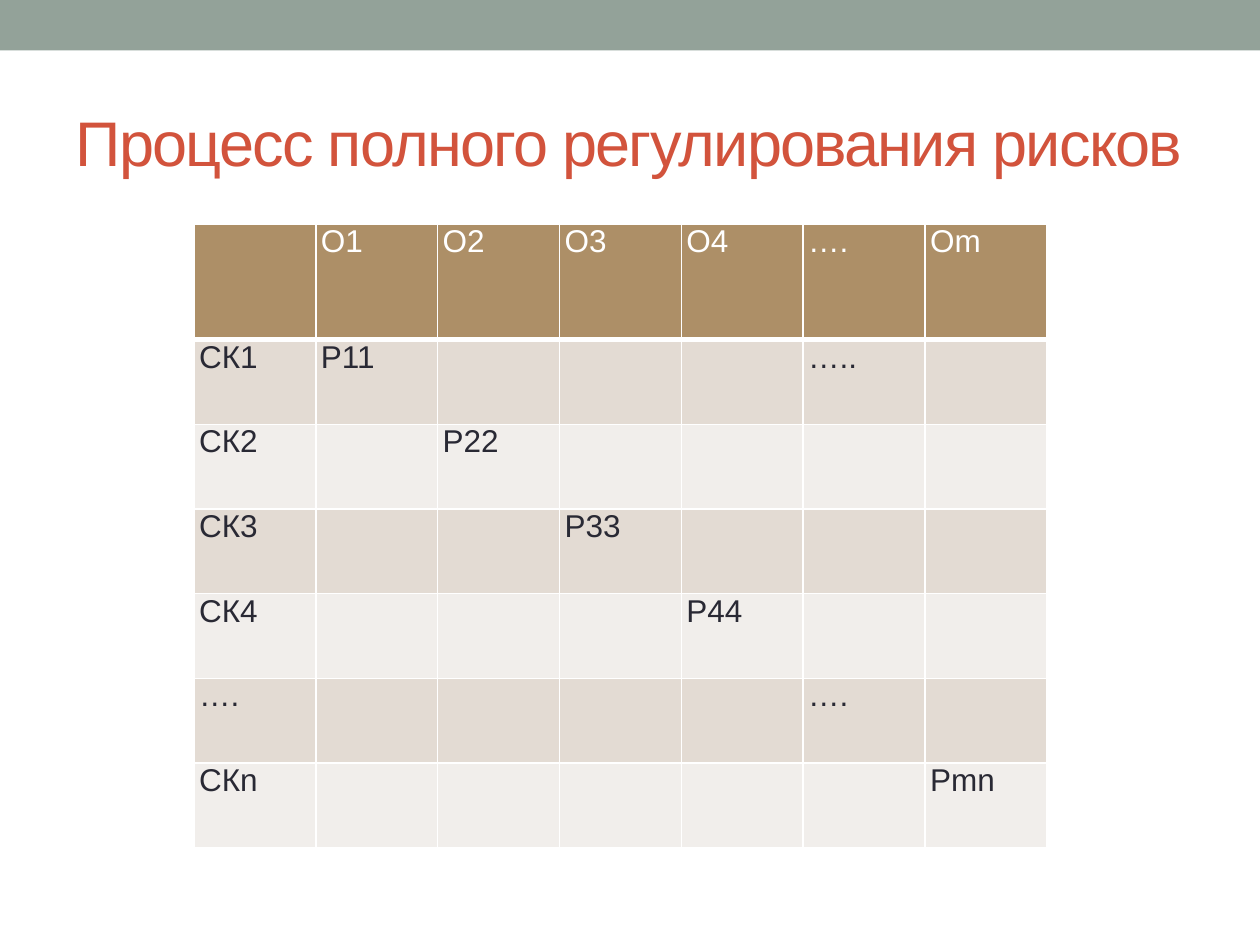
from lxml import etree
from pptx import Presentation
from pptx.dml.color import RGBColor
from pptx.enum.shapes import MSO_SHAPE
from pptx.enum.text import MSO_ANCHOR, PP_ALIGN
from pptx.oxml.ns import qn
from pptx.util import Inches, Pt

RECTANGLE = MSO_SHAPE.RECTANGLE
MIDDLE = MSO_ANCHOR.MIDDLE
LEFT, JUSTIFY = PP_ALIGN.LEFT, PP_ALIGN.JUSTIFY

SAGE = RGBColor(0x93, 0xA2, 0x99)
BRICK = RGBColor(0xD2, 0x53, 0x3C)
TAN = RGBColor(0xAD, 0x8F, 0x67)
BANDS = RGBColor(0xE3, 0xDB, 0xD3), RGBColor(0xF1, 0xEE, 0xEB)
INK = RGBColor(0x29, 0x29, 0x34)
WHITE = RGBColor(0xFF, 0xFF, 0xFF)
FONT = "Arial"

OUTCOMES = ["О1", "О2", "О3", "О4", "….", "Оm"]
SITUATIONS = ["СК1", "СК2", "СК3", "СК4", "….", "СКn"]
# (row, column) of the filled cells in the body of the matrix
RISKS = {(1, 1): "Р11", (1, 5): "…..", (2, 2): "Р22", (3, 3): "Р33",
         (4, 4): "Р44", (5, 5): "….", (6, 6): "Рmn"}
HEADER_SHARE = 0.185


def format_run(run, size, color):
    run.font.name = FONT
    run.font.size = Pt(size)
    run.font.color.rgb = color


def add_band(slide, left, top, width, height):
    band = slide.shapes.add_shape(RECTANGLE, left, top, width, height)
    band.shadow.inherit = False
    band.fill.solid()
    band.fill.fore_color.rgb = SAGE
    band.line.fill.background()


def place_title(slide, left, top, width, height):
    title = slide.shapes.title
    title.left, title.top, title.width, title.height = left, top, width, height
    frame = title.text_frame
    frame.text = "Процесс полного регулирования рисков"
    frame.vertical_anchor = MIDDLE
    frame.word_wrap = True
    heading = frame.paragraphs[0]
    heading.alignment = LEFT
    format_run(heading.runs[0], 36, BRICK)
    heading.runs[0].font._element.set("spc", "-100")


def set_borders(cell, bottom_width):
    """Draw white borders; they must precede the fill in the cell properties."""
    properties = cell._tc.get_or_add_tcPr()
    widths = {"a:lnL": 1, "a:lnR": 1, "a:lnT": 1, "a:lnB": bottom_width}
    for position, (side, width) in enumerate(widths.items()):
        line = etree.Element(qn(side), w=str(Pt(width)))
        fill = etree.SubElement(line, qn("a:solidFill"))
        etree.SubElement(fill, qn("a:srgbClr"), val=str(WHITE))
        properties.insert(position, line)


def fill_cell(cell, text, background, color, bottom_width):
    cell.fill.solid()
    cell.fill.fore_color.rgb = background
    set_borders(cell, bottom_width)
    if not text:
        return
    cell.margin_left = cell.margin_right = Inches(0.04)
    cell.margin_top = cell.margin_bottom = 0
    cell.text_frame.text = text
    paragraph = cell.text_frame.paragraphs[0]
    paragraph.alignment = JUSTIFY
    format_run(paragraph.runs[0], 18, color)


def add_risk_matrix(slide, left, top, width, height):
    rows, columns = len(SITUATIONS) + 1, len(OUTCOMES) + 1
    matrix = slide.shapes.add_table(rows, columns, left, top, width, height).table
    header_height = int(height * HEADER_SHARE)
    for column in matrix.columns:
        column.width = width // columns
    for row in matrix.rows:
        row.height = (height - header_height) // len(SITUATIONS)
    matrix.rows[0].height = header_height

    texts = dict(RISKS)
    texts.update({(0, c): name for c, name in enumerate(OUTCOMES, 1)})
    texts.update({(r, 0): name for r, name in enumerate(SITUATIONS, 1)})
    for r in range(rows):
        style = (BANDS[(r - 1) % 2], INK, 1) if r else (TAN, WHITE, 3)
        for c in range(columns):
            fill_cell(matrix.cell(r, c), texts.get((r, c)), *style)


def main():
    deck = Presentation()
    deck.slide_width, deck.slide_height = Inches(10), Inches(7.5)
    slide = deck.slides.add_slide(deck.slide_layouts[5])
    add_band(slide, 0, 0, deck.slide_width, Inches(0.4))
    place_title(slide, Inches(0.5), Inches(0.58), Inches(9), Inches(1.08))
    add_risk_matrix(slide, Inches(1.54), Inches(1.78), Inches(6.77), Inches(4.95))
    deck.save("out.pptx")


if __name__ == "__main__":
    main()
